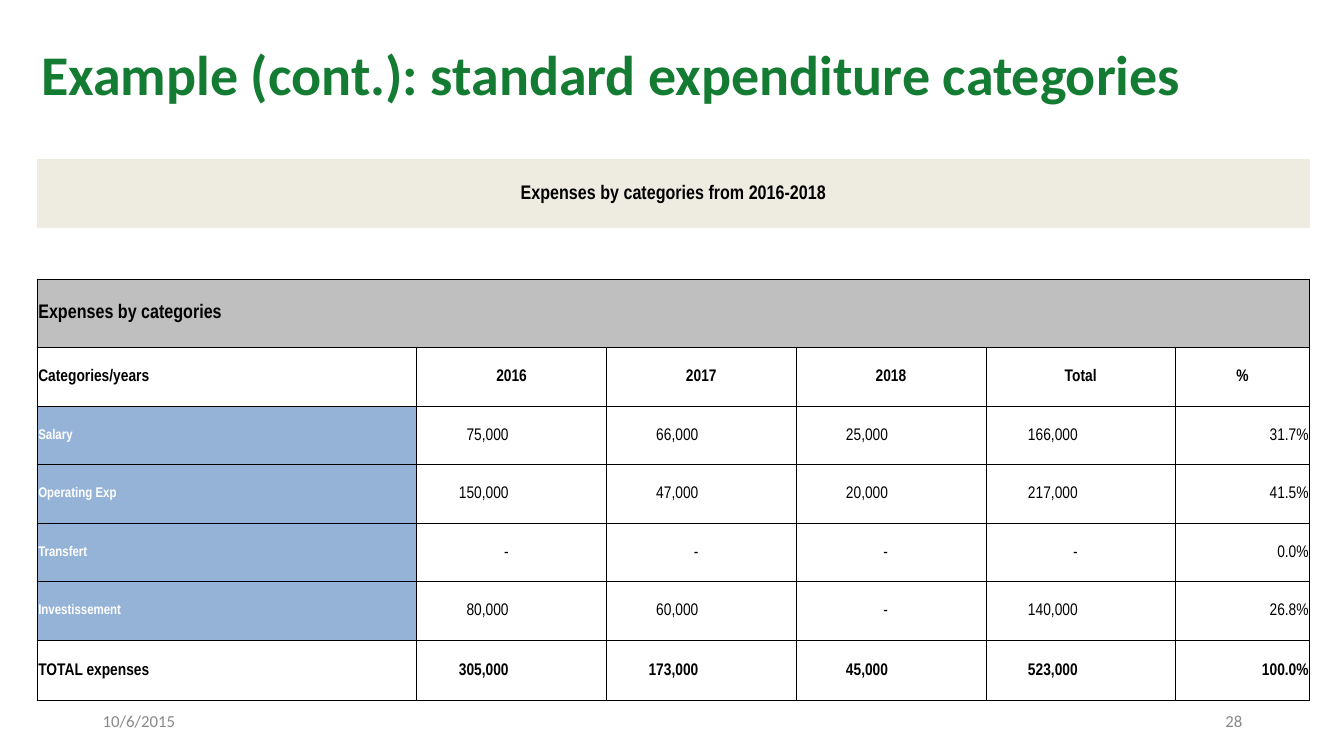
from dataclasses import dataclass

from lxml import etree
from pptx import Presentation
from pptx.dml.color import RGBColor
from pptx.enum.text import MSO_ANCHOR, PP_ALIGN
from pptx.oxml.ns import qn
from pptx.util import Inches, Pt

MID = MSO_ANCHOR.MIDDLE
LEFT, MID_X, RIGHT = PP_ALIGN.LEFT, PP_ALIGN.CENTER, PP_ALIGN.RIGHT
PLAIN = "{2D5ABB26-0587-4C30-8999-92F81FD0307C}"  # table style without grid


@dataclass(frozen=True)
class Theme:
    head: str = "Calibri"
    body: str = "Arial Narrow"
    green: str = "147B33"
    gray: str = "898989"
    black: str = "000000"
    white: str = "FFFFFF"
    cream: str = "EEECE1"
    silver: str = "BFBFBF"
    blue: str = "95B3D7"
    title: int = 40
    band: int = 14
    text: int = 12
    label: int = 10
    thick: float = 1
    thin: float = 0.5
    pad: float = 0.01
    inset: float = 0.97  # room to the right of the amounts


T = Theme()

BANNER = "Expenses by categories from 2016-2018"
BAND = "Expenses by categories"
YEARS = ["Categories/years", "2016", "2017", "2018", "Total", "%"]
COSTS = [
    ["Salary", "75,000", "66,000", "25,000", "166,000", "31.7%"],
    ["Operating Exp", "150,000", "47,000", "20,000", "217,000", "41.5%"],
    ["Transfert", "-", "-", "-", "-", "0.0%"],
    ["Investissement", "80,000", "60,000", "-", "140,000", "26.8%"],
]
TOTAL = ["TOTAL expenses", "305,000", "173,000", "45,000", "523,000", "100.0%"]


def write(frame, text, font, size, color, bold=False, align=LEFT):
    para = frame.paragraphs[0]
    para.alignment = align
    run = para.add_run()
    run.text = text
    run.font.name = font
    run.font.size = Pt(size)
    run.font.bold = bold
    run.font.color.rgb = RGBColor.from_string(color)
    return para


def add_text(slide, box, text, size, color, bold=False, align=LEFT):
    frame = slide.shapes.add_textbox(*map(Inches, box)).text_frame
    frame.word_wrap = True
    frame.vertical_anchor = MID
    return write(frame, text, T.head, size, color, bold, align)


def add_title(slide, box):
    para = add_text(slide, box, "Example (cont.): standard expenditure categories",
                    T.title, T.green, True)
    para.line_spacing = 0.9


def add_foot(slide, box):
    left, top, width, height = box
    part = 3
    add_text(slide, (left, top, part, height), "10/6/2015", T.text, T.gray)
    add_text(slide, (left + width - part, top, part, height), "28",
             T.text, T.gray, align=RIGHT)


def set_edges(cell, left, right, top, bottom):
    props = cell._tc.get_or_add_tcPr()
    for side, width in zip("LRTB", (left, right, top, bottom)):
        line = etree.SubElement(props, qn(f"a:ln{side}"), w=str(Pt(width)))
        if width:
            fill = etree.SubElement(line, qn("a:solidFill"))
            etree.SubElement(fill, qn("a:srgbClr"), val=T.black)
        else:
            etree.SubElement(line, qn("a:noFill"))


def set_cell(cell, text, size=T.text, color=T.black, bold=True, align=LEFT, inset=T.pad):
    cell.vertical_anchor = MID
    cell.margin_left = cell.margin_top = Inches(T.pad)
    cell.margin_right = Inches(inset)
    cell.margin_bottom = 0
    write(cell.text_frame, text, T.body, size, color, bold, align)


def set_fill(cell, color):
    cell.fill.solid()
    cell.fill.fore_color.rgb = RGBColor.from_string(color)


def add_costs(slide, box):
    left, top, width, height = box
    last = 1.33
    unit = (width - last) / 6
    cols = [2 * unit] + [unit] * 4 + [last]
    rows = [0.68, 0.51, 0.68] + [0.58] * 5 + [0.6]
    table = slide.shapes.add_table(len(rows), len(cols), *map(Inches, box)).table
    table._tbl.tblPr.find(qn("a:tableStyleId")).text = PLAIN
    table.first_row = table.horz_banding = False
    for col, size in zip(table.columns, cols):
        col.width = Inches(size)
    for row, size in zip(table.rows, rows):
        row.height = Inches(size)

    # Borders: open banner and gap, thick frame, thin inner grid
    end, base = len(cols) - 1, len(rows) - 1
    for y in range(len(rows)):
        for x in range(len(cols)):
            cell = table.cell(y, x)
            if y < 2:
                set_edges(cell, 0, 0, 0, T.thick if y == 1 else 0)
            else:
                set_edges(cell,
                          T.thick if x == 0 else T.thin,
                          T.thick if x == end else T.thin,
                          T.thick if y == 2 else T.thin,
                          T.thick if y == base else T.thin)

    # Full-width bands
    for y, text, color, align in ((0, BANNER, T.cream, MID_X), (2, BAND, T.silver, LEFT)):
        cell = table.cell(y, 0)
        cell.merge(table.cell(y, end))
        set_cell(cell, text, T.band, align=align)
        set_fill(cell, color)

    # Column heads
    for x, text in enumerate(YEARS):
        set_cell(table.cell(3, x), text, align=MID_X if x else LEFT)

    # Amounts and total
    for y, values in enumerate(COSTS + [TOTAL], 4):
        bold = y == base
        name = table.cell(y, 0)
        if bold:
            set_cell(name, values[0])
        else:
            set_cell(name, values[0], T.label, T.white)
            set_fill(name, T.blue)
        for x, text in enumerate(values[1:], 1):
            set_cell(table.cell(y, x), text, bold=bold, align=RIGHT,
                     inset=T.pad if x == end else T.inset)


def main():
    deck = Presentation()
    deck.slide_width, deck.slide_height = Inches(13.33), Inches(7.5)
    slide = deck.slides.add_slide(deck.slide_layouts[6])
    add_title(slide, (0.31, 0.14, 11.84, 1.25))
    add_foot(slide, (0.92, 6.95, 11.5, 0.4))
    add_costs(slide, (0.37, 1.58, 12.62, 5.37))
    deck.save("out.pptx")


if __name__ == "__main__":
    main()
